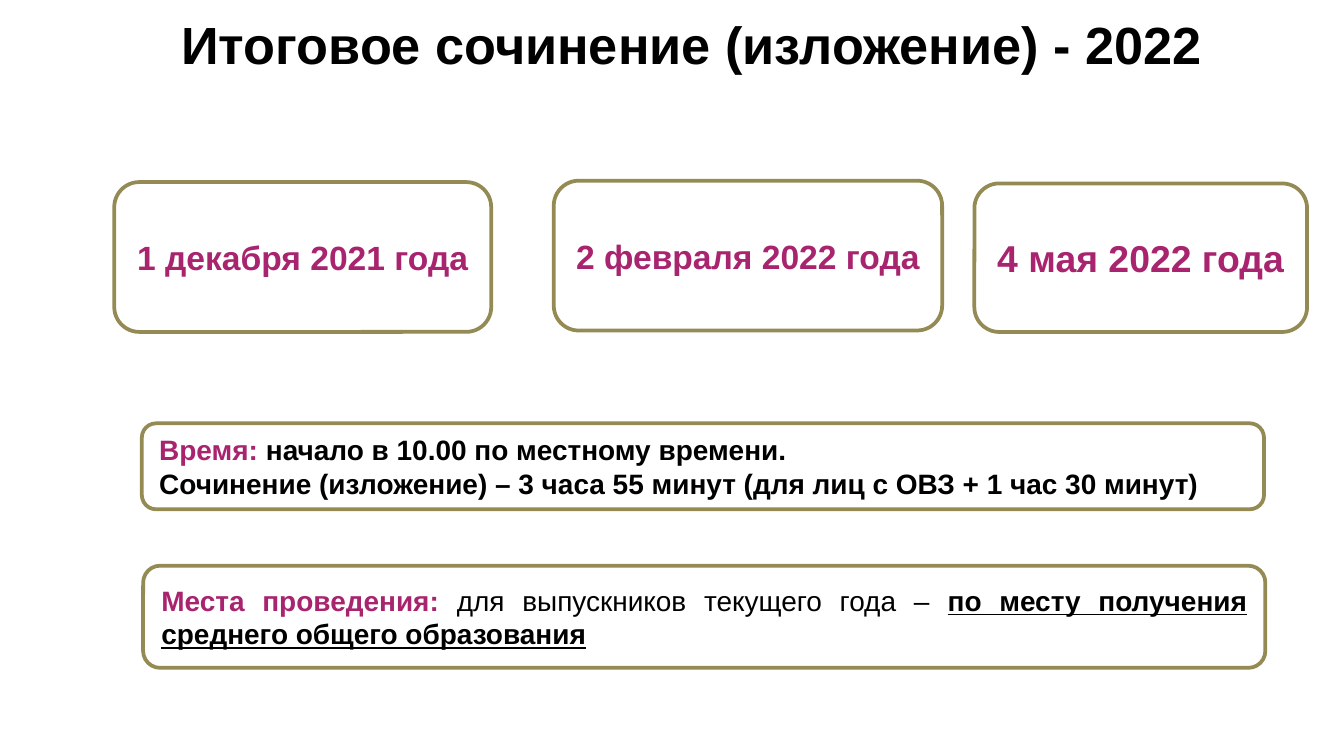
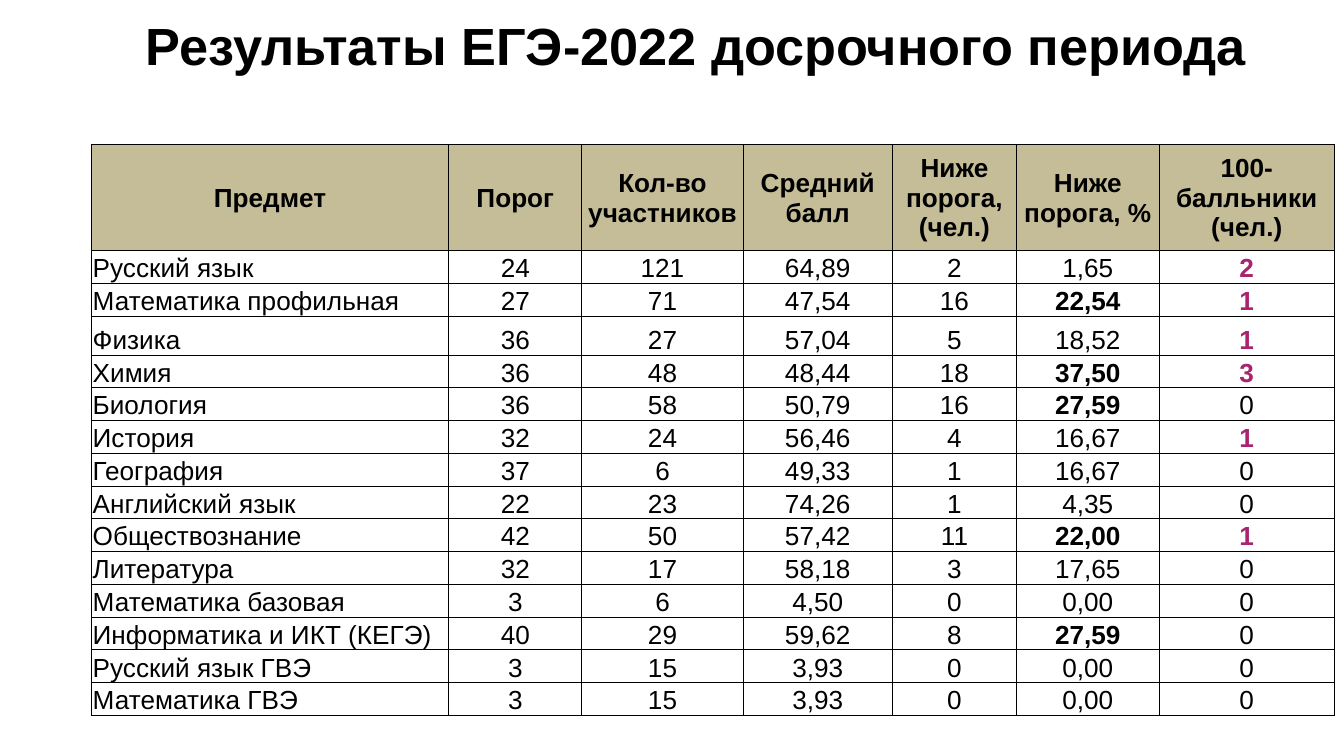
from dataclasses import dataclass
from typing import NamedTuple

from lxml import etree
from pptx import Presentation
from pptx import util as u
from pptx.dml.color import RGBColor
from pptx.enum import shapes, text
from pptx.oxml import ns

PX = 4572
ALIGN = text.PP_ALIGN
ANCHOR = text.MSO_ANCHOR


@dataclass(frozen=True)
class Theme:
    font: str = "Arial"
    ink: str = "000000"
    paper: str = "FFFFFF"
    accent: str = "A8246F"
    frame: str = "948A54"
    header: str = "C4BD97"
    title_size: int = 28
    date_size: int = 18
    last_date_size: int = 20
    note_size: int = 15
    table_size: int = 14
    frame_width: float = 2
    grid_width: float = 0.5


T = Theme()


class Box(NamedTuple):
    left: int
    top: int
    width: int
    height: int


class Run(NamedTuple):
    text: str
    color: str = T.ink
    bold: bool = True
    underline: bool = False


@dataclass(frozen=True)
class Card:
    box: Box
    paragraphs: list[list[Run]]
    size: int
    align: ALIGN


class Result(NamedTuple):
    subject: str
    threshold: str
    participants: str
    average: str
    below: str
    below_percent: str
    top_scorers: str


def px(n: int) -> u.Emu:
    return u.Emu(n * PX)


def emu(box: Box) -> list[u.Emu]:
    return [px(n) for n in box]


def rgb(color: str) -> RGBColor:
    return RGBColor.from_string(color)


def add_text(tf, paragraphs: list[list[Run]], size: int, align: ALIGN) -> None:
    tf.word_wrap = True
    for i, runs in enumerate(paragraphs):
        p = tf.paragraphs[0] if i == 0 else tf.add_paragraph()
        p.alignment = align
        for run in runs:
            r = p.add_run()
            r.text = run.text
            r.font.name = T.font
            r.font.size = u.Pt(size)
            r.font.bold = run.bold
            r.font.underline = run.underline
            r.font.color.rgb = rgb(run.color)


def add_slide(prs, title: str, box: Box):
    s = prs.slides.add_slide(prs.slide_layouts[6])
    tf = s.shapes.add_textbox(*emu(box)).text_frame
    add_text(tf, [[Run(title)]], T.title_size, ALIGN.CENTER)
    tf.auto_size = text.MSO_AUTO_SIZE.SHAPE_TO_FIT_TEXT
    return s


def add_card(s, card: Card) -> None:
    sp = s.shapes.add_shape(shapes.MSO_SHAPE.ROUNDED_RECTANGLE, *emu(card.box))
    sp.shadow.inherit = False
    sp.fill.solid()
    sp.fill.fore_color.rgb = rgb(T.paper)
    sp.line.color.rgb = rgb(T.frame)
    sp.line.width = u.Pt(T.frame_width)
    sp.text_frame.vertical_anchor = ANCHOR.MIDDLE
    add_text(sp.text_frame, card.paragraphs, card.size, card.align)


def add_borders(cell) -> None:
    tc_pr = cell._tc.get_or_add_tcPr()
    for side in ("lnL", "lnR", "lnT", "lnB"):
        ln = etree.SubElement(tc_pr, ns.qn(f"a:{side}"), w=str(u.Pt(T.grid_width)))
        fill = etree.SubElement(ln, ns.qn("a:solidFill"))
        etree.SubElement(fill, ns.qn("a:srgbClr"), val=T.ink)


def fill_cell(cell, run: Run, align: ALIGN, is_header: bool) -> None:
    cell.margin_left = cell.margin_top = cell.margin_right = px(2)
    cell.margin_bottom = 0
    cell.vertical_anchor = ANCHOR.MIDDLE if is_header else ANCHOR.BOTTOM
    add_borders(cell)
    if is_header:
        cell.fill.solid()
        cell.fill.fore_color.rgb = rgb(T.header)
    else:
        cell.fill.background()
    add_text(cell.text_frame, [[run]], T.table_size, align)


def result_runs(result: Result) -> list[Run]:
    runs = [Run(value, bold=False) for value in result]
    if float(result.below_percent.replace(",", ".")) >= 20:
        runs[5] = Run(result.below_percent)
    if result.top_scorers != "0":
        runs[6] = Run(result.top_scorers, T.accent)
    return runs


def add_results(s, box: Box, widths: list[int], heights: list[int]) -> None:
    table = s.shapes.add_table(len(heights), len(widths), *emu(box)).table
    table.first_row = table.horz_banding = False
    for column, width in zip(table.columns, widths):
        column.width = px(width)
    for row, height in zip(table.rows, heights):
        row.height = px(height)
    rows = [[Run(name) for name in HEADERS], *map(result_runs, RESULTS)]
    for i, runs in enumerate(rows):
        for j, run in enumerate(runs):
            align = ALIGN.LEFT if i and j == 0 else ALIGN.CENTER
            fill_cell(table.cell(i, j), run, align, i == 0)


def date_card(box: Box, date: str, size: int = T.date_size) -> Card:
    return Card(box, [[Run(date, T.accent)]], size, ALIGN.CENTER)


def note_card(box: Box, *paragraphs: list[Run]) -> Card:
    return Card(box, list(paragraphs), T.note_size, ALIGN.JUSTIFY)


CARDS = [
    date_card(Box(170, 271, 561, 223), "1 декабря 2021 года"),
    date_card(Box(824, 269, 578, 223), "2 февраля 2022 года "),
    date_card(Box(1450, 273, 495, 221), "4 мая 2022 года", T.last_date_size),
    note_card(
        Box(211, 630, 1670, 128),
        [Run("Время: ", T.accent), Run("начало в 10.00 по местному времени.")],
        [Run("Сочинение (изложение) – 3 часа 55 минут (для лиц с ОВЗ + 1 час 30 минут)")],
    ),
    note_card(
        Box(213, 842, 1670, 152),
        [
            Run("Места проведения: ", T.accent),
            Run("для выпускников текущего года – ", bold=False),
            Run("по месту получения среднего общего образования", underline=True),
        ],
    ),
]

HEADERS = Result(
    "Предмет", "Порог", "Кол-во участников", "Средний балл",
    "Ниже порога, (чел.)", "Ниже порога, %", "100-балльники (чел.)",
)

RESULTS = [
    Result("Русский язык", "24", "121", "64,89", "2", "1,65", "2"),
    Result("Математика профильная", "27", "71", "47,54", "16", "22,54", "1"),
    Result("Физика", "36", "27", "57,04", "5", "18,52", "1"),
    Result("Химия", "36", "48", "48,44", "18", "37,50", "3"),
    Result("Биология", "36", "58", "50,79", "16", "27,59", "0"),
    Result("История", "32", "24", "56,46", "4", "16,67", "1"),
    Result("География", "37", "6", "49,33", "1", "16,67", "0"),
    Result("Английский язык", "22", "23", "74,26", "1", "4,35", "0"),
    Result("Обществознание", "42", "50", "57,42", "11", "22,00", "1"),
    Result("Литература", "32", "17", "58,18", "3", "17,65", "0"),
    Result("Математика базовая", "3", "6", "4,50", "0", "0,00", "0"),
    Result("Информатика и ИКТ (КЕГЭ)", "40", "29", "59,62", "8", "27,59", "0"),
    Result("Русский язык ГВЭ", "3", "15", "3,93", "0", "0,00", "0"),
    Result("Математика ГВЭ", "3", "15", "3,93", "0", "0,00", "0"),
]


def main() -> None:
    prs = Presentation()
    prs.slide_width, prs.slide_height = px(2000), px(1125)

    s = add_slide(prs, "Итоговое сочинение (изложение) - 2022", Box(92, 8, 1874, 114))
    for card in CARDS:
        add_card(s, card)

    s = add_slide(prs, "Результаты ЕГЭ-2022 досрочного периода", Box(122, 10, 1827, 114))
    widths = [532, 198, 240, 222, 185, 212, 261]
    heights = [158, 40, 40, 58] + [40] * 11
    add_results(s, Box(136, 215, sum(widths), 844), widths, heights)

    prs.save("out.pptx")


if __name__ == "__main__":
    main()
